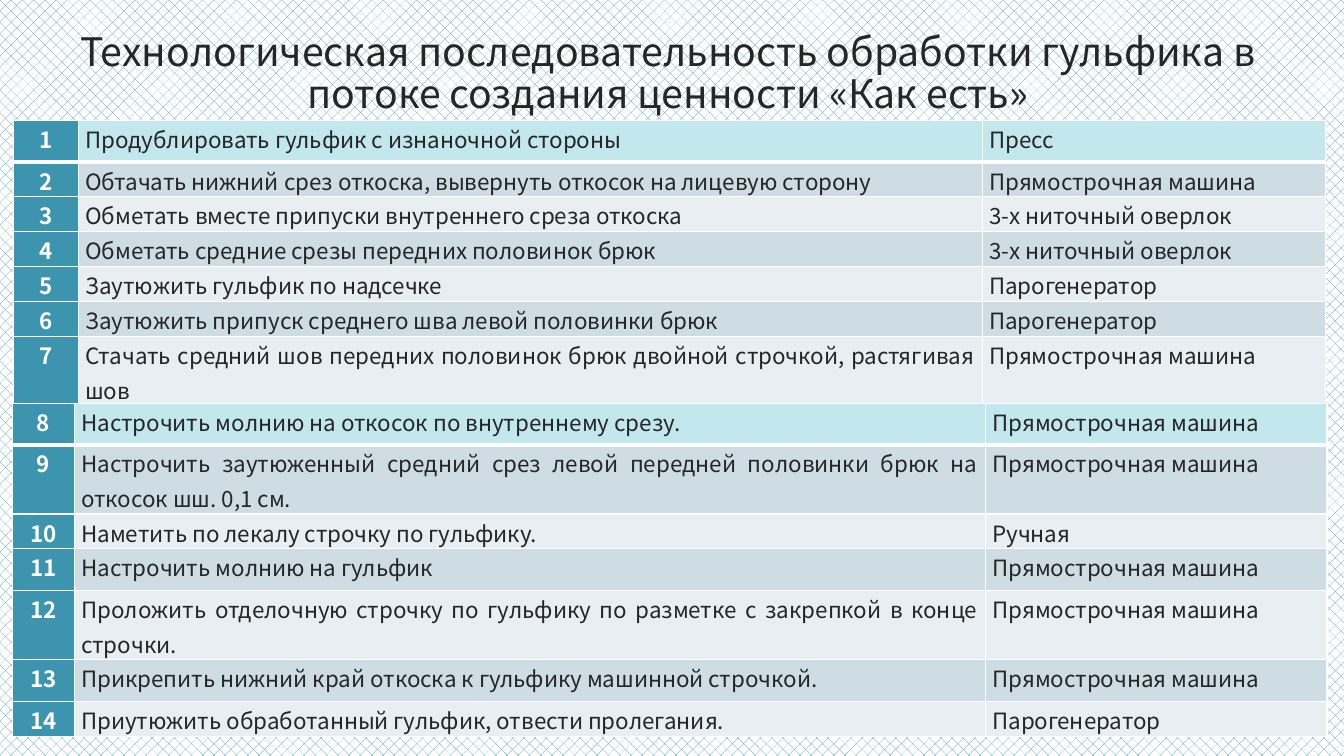
from dataclasses import dataclass

from lxml import etree
from pptx import Presentation
from pptx import util as u
from pptx.dml.color import RGBColor
from pptx.enum import dml, text
from pptx.oxml.ns import qn


@dataclass(frozen=True)
class Theme:
    font: str = "Noto Sans CJK SC"
    title_size: int = 28
    table_size: int = 16
    ink: str = "262626"
    white: str = "FFFFFF"
    teal: str = "3D94AE"
    first_row: str = "C2E8EE"
    bands: tuple = ("E8EEF2", "CEDCE3")


theme = Theme()


def style_paragraph(paragraph, size, color, align, spacing, bold=False):
    paragraph.alignment = align
    paragraph.line_spacing = spacing
    for run in paragraph.runs:
        run.font.name = theme.font
        run.font.size = u.Pt(size)
        run.font.bold = bold
        run.font.color.rgb = RGBColor.from_string(color)


def add_borders(cell, bottom_width):
    """Draw white lines on all four sides; call before the cell is filled."""
    properties = cell._tc.get_or_add_tcPr()
    for side, width in (("L", 1), ("R", 1), ("T", 1), ("B", bottom_width)):
        line = etree.SubElement(properties, qn(f"a:ln{side}"), w=str(u.Pt(width)))
        solid = etree.SubElement(line, qn("a:solidFill"))
        etree.SubElement(solid, qn("a:srgbClr"), val=theme.white)


presentation = Presentation()
presentation.slide_width = u.Cm(33.87)
presentation.slide_height = u.Cm(19.05)
slide = presentation.slides.add_slide(presentation.slide_layouts[6])

background = slide.background.fill
background.patterned()
background.pattern = dml.MSO_PATTERN.PERCENT_25
background.fore_color.rgb = RGBColor.from_string(theme.teal)
background.back_color.rgb = RGBColor.from_string(theme.white)

title = slide.shapes.add_textbox(u.Cm(0.51), u.Cm(0.69), u.Cm(32.64), u.Cm(2.39))
title.text_frame.word_wrap = True
title.text_frame.vertical_anchor = text.MSO_ANCHOR.BOTTOM
title.text_frame.text = (
    "Технологическая последовательность обработки гульфика "
    "в потоке создания ценности «Как есть»"
)
style_paragraph(title.text_frame.paragraphs[0], theme.title_size, theme.ink,
                text.PP_ALIGN.CENTER, 0.9)

SEWING = "Прямострочная машина"
OVERLOCK = "3-х ниточный оверлок"
STEAM = "Парогенератор"

# Row heights in cm: text on one line, one line with room, text on two lines
ONE_LINE = 0.88
ROOMY = 1.05
TWO_LINES = 1.74

# Each table: left, top, column widths in cm, then (row height, operation, equipment)
tables = [
    (0.34, 3.03, (1.63, 22.78, 8.66), [
        (ROOMY, "Продублировать гульфик с изнаночной стороны", "Пресс"),
        (ONE_LINE, "Обтачать нижний срез откоска, вывернуть откосок на лицевую сторону",
         SEWING),
        (ONE_LINE, "Обметать вместе припуски внутреннего среза откоска", OVERLOCK),
        (ONE_LINE, "Обметать средние срезы передних половинок брюк", OVERLOCK),
        (ONE_LINE, "Заутюжить гульфик по надсечке", STEAM),
        (ONE_LINE, "Заутюжить припуск среднего шва левой половинки брюк", STEAM),
        (TWO_LINES, "Стачать средний шов передних половинок брюк двойной строчкой, "
                    "растягивая шов", SEWING),
    ]),
    (0.32, 10.16, (1.55, 22.96, 8.61), [
        (ROOMY, "Настрочить молнию на откосок по внутреннему срезу.", SEWING),
        (TWO_LINES, "Настрочить заутюженный средний срез левой передней половинки брюк "
                    "на откосок шш. 0,1 см.", SEWING),
        (ONE_LINE, "Наметить по лекалу строчку по гульфику.", "Ручная"),
        (ROOMY, "Настрочить молнию на гульфик", SEWING),
        (TWO_LINES, "Проложить отделочную строчку по гульфику по разметке с закрепкой "
                    "в конце строчки.", SEWING),
        (ROOMY, "Прикрепить нижний край откоска к гульфику машинной строчкой.", SEWING),
        (ONE_LINE, "Приутюжить обработанный гульфик, отвести пролегания.", STEAM),
    ]),
]

aligns = (text.PP_ALIGN.CENTER, text.PP_ALIGN.JUSTIFY, text.PP_ALIGN.LEFT)
step = 0
for left, top, widths, operations in tables:
    table = slide.shapes.add_table(
        len(operations), len(widths), u.Cm(left), u.Cm(top),
        u.Cm(sum(widths)), u.Cm(sum(row[0] for row in operations)),
    ).table
    table.first_row = table.horz_banding = False
    for column, width in zip(table.columns, widths):
        column.width = u.Cm(width)

    for row, (height, operation, equipment) in enumerate(operations):
        step += 1
        table.rows[row].height = u.Cm(height)
        row_color = theme.bands[row % 2] if row else theme.first_row
        for column, content in enumerate((str(step), operation, equipment)):
            is_number = column == 0
            cell = table.cell(row, column)
            cell.margin_left = cell.margin_right = u.Cm(0.18)
            cell.margin_top = cell.margin_bottom = 0
            add_borders(cell, 1 if row else 3)
            cell.fill.solid()
            cell.fill.fore_color.rgb = RGBColor.from_string(
                theme.teal if is_number else row_color)
            cell.text_frame.text = content
            style_paragraph(cell.text_frame.paragraphs[0], theme.table_size,
                            theme.white if is_number else theme.ink,
                            aligns[column], 1.07, bold=is_number)

presentation.save("out.pptx")
